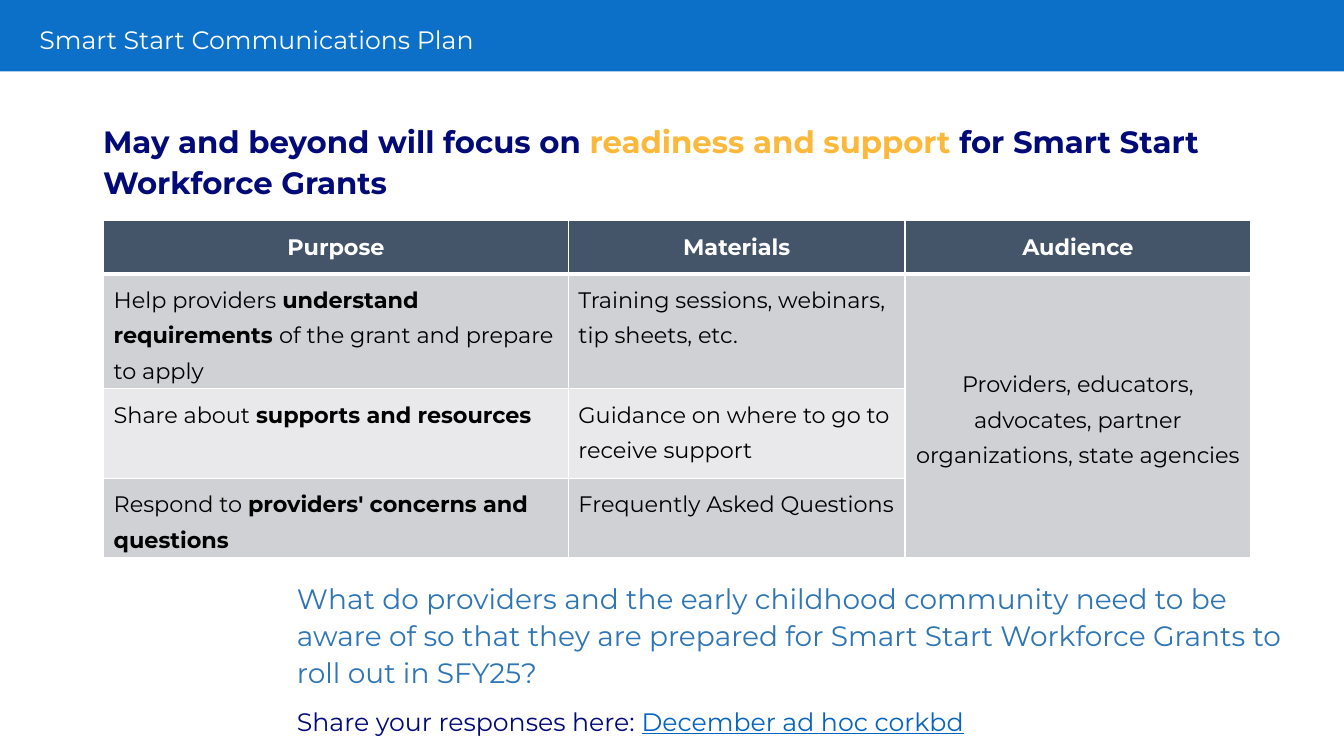
from dataclasses import dataclass

from lxml.etree import SubElement
from pptx import Presentation
from pptx.dml.color import RGBColor
from pptx.enum.shapes import MSO_SHAPE
from pptx.enum.text import MSO_ANCHOR, PP_ALIGN
from pptx.oxml.ns import qn
from pptx.util import Pt


@dataclass(frozen=True)
class Theme:
    font: str = "Montserrat"
    white: str = "FFFFFF"
    black: str = "000000"
    banner: str = "0C70C8"
    navy: str = "020A78"
    gold: str = "FBB83A"
    header: str = "445469"
    bands: tuple = ("CFD1D4", "E9E9EB")
    question: str = "2E75B6"
    link: str = "0563C1"
    headline_size: float = 22
    question_size: float = 20
    body_size: float = 18
    table_size: float = 16


THEME = Theme()


@dataclass(frozen=True)
class Box:
    left: float
    top: float
    width: float
    height: float

    def inner(self, left, top, width, height):
        """Return a box whose corner is offset from this one."""
        return Box(self.left + left, self.top + top, width, height)

    def lengths(self):
        return [Pt(value) for value in (self.left, self.top, self.width, self.height)]


def write(frame, *runs, size, color, spacing, align=PP_ALIGN.LEFT, bold=False):
    """Fill a text frame; a run is a string or a (string, overrides) pair."""
    paragraph = frame.paragraphs[0]
    paragraph.alignment = align
    paragraph.line_spacing = spacing
    for item in runs:
        text, changes = (item, {}) if isinstance(item, str) else item
        run = paragraph.add_run()
        run.text = text
        run.font.name = THEME.font
        run.font.size = Pt(size)
        run.font.bold = changes.get("bold", bold)
        run.font.underline = changes.get("underline", False)
        run.font.color.rgb = RGBColor.from_string(changes.get("color", color))


def add_text(slide, box, *runs, anchor=MSO_ANCHOR.TOP, **text_format):
    frame = slide.shapes.add_textbox(*box.lengths()).text_frame
    frame.word_wrap = True
    frame.vertical_anchor = anchor
    write(frame, *runs, **text_format)


def add_banner(slide, box):
    banner = slide.shapes.add_shape(MSO_SHAPE.RECTANGLE, *box.lengths())
    banner.shadow.inherit = False
    banner.fill.solid()
    banner.fill.fore_color.rgb = RGBColor.from_string(THEME.banner)
    banner.line.fill.background()
    add_text(slide, box.inner(21, 16, 543.5, 27), "Smart Start Communications Plan",
             anchor=MSO_ANCHOR.MIDDLE, size=THEME.body_size, color=THEME.white,
             spacing=0.9)


def add_headline(slide, box):
    add_text(slide, box, "May and beyond will focus on ",
             ("readiness and support ", {"color": THEME.gold}),
             "for Smart Start Workforce Grants",
             size=THEME.headline_size, color=THEME.navy, spacing=1.1, bold=True)


def paint_cell(cell, fill, top=1, bottom=1):
    """Set white borders of the given widths, then the fill."""
    properties = cell._tc.get_or_add_tcPr()
    for side, width in (("L", 1), ("R", 1), ("T", top), ("B", bottom)):
        border = SubElement(properties, qn(f"a:ln{side}"), w=str(Pt(width)))
        solid = SubElement(border, qn("a:solidFill"))
        SubElement(solid, qn("a:srgbClr"), val=THEME.white)
    cell.fill.solid()
    cell.fill.fore_color.rgb = RGBColor.from_string(fill)


def add_plan_table(slide, box):
    strong = {"bold": True}
    headings = ["Purpose", "Materials", "Audience"]
    activities = [
        (["Help providers ", ("understand requirements ", strong),
          "of the grant and prepare to apply"],
         ["Training sessions, webinars, tip sheets, etc."]),
        (["Share about ", ("supports and resources", strong)],
         ["Guidance on where to go to receive support"]),
        (["Respond to ", ("providers' concerns and questions", strong)],
         ["Frequently Asked Questions"]),
    ]
    audience = "Providers, educators, advocates, partner organizations, state agencies"
    body = {"size": THEME.table_size, "color": THEME.black, "spacing": 1.3}

    table = slide.shapes.add_table(len(activities) + 1, len(headings),
                                   *box.lengths()).table
    for column, width in zip(table.columns, (332, 240.5, 247)):
        column.width = Pt(width)
    for row, height in zip(table.rows, (38, 64, 64, 47.5)):
        row.height = Pt(height)

    for column, heading in enumerate(headings):
        cell = table.cell(0, column)
        paint_cell(cell, THEME.header, bottom=3)
        write(cell.text_frame, heading, size=THEME.table_size, color=THEME.white,
              spacing=1.3, align=PP_ALIGN.CENTER, bold=True)

    for row, activity in enumerate(activities, start=1):
        band = THEME.bands[(row - 1) % 2]
        for column in range(len(headings)):
            paint_cell(table.cell(row, column), band, top=3 if row == 1 else 1)
        for column, runs in enumerate(activity):
            write(table.cell(row, column).text_frame, *runs, **body)

    audience_cell = table.cell(1, 2)
    audience_cell.merge(table.cell(len(activities), 2))
    audience_cell.vertical_anchor = MSO_ANCHOR.MIDDLE
    write(audience_cell.text_frame, audience, align=PP_ALIGN.CENTER, **body)


def add_discussion(slide, box):
    add_text(slide, box.inner(0, 0, box.width, 85.5),
             "What do providers and the early childhood community need to be aware of "
             "so that they are prepared for Smart Start Workforce Grants to roll out "
             "in SFY25?",
             size=THEME.question_size, color=THEME.question, spacing=1.1)
    add_text(slide, box.inner(0, 87, 681, 31.5), "Share your responses here: ",
             ("December ad hoc corkbd", {"color": THEME.link, "underline": True}),
             size=THEME.body_size, color=THEME.navy, spacing=1.2)


def main():
    presentation = Presentation()
    presentation.slide_width, presentation.slide_height = Pt(960), Pt(540)
    slide = presentation.slides.add_slide(presentation.slide_layouts[6])
    add_banner(slide, Box(0, 0, 960, 51))
    add_headline(slide, Box(66.5, 81.5, 826.5, 37))
    add_plan_table(slide, Box(74, 157.5, 819.5, 213.5))
    add_discussion(slide, Box(205, 409.5, 744, 118.5))
    presentation.save("out.pptx")


if __name__ == "__main__":
    main()
